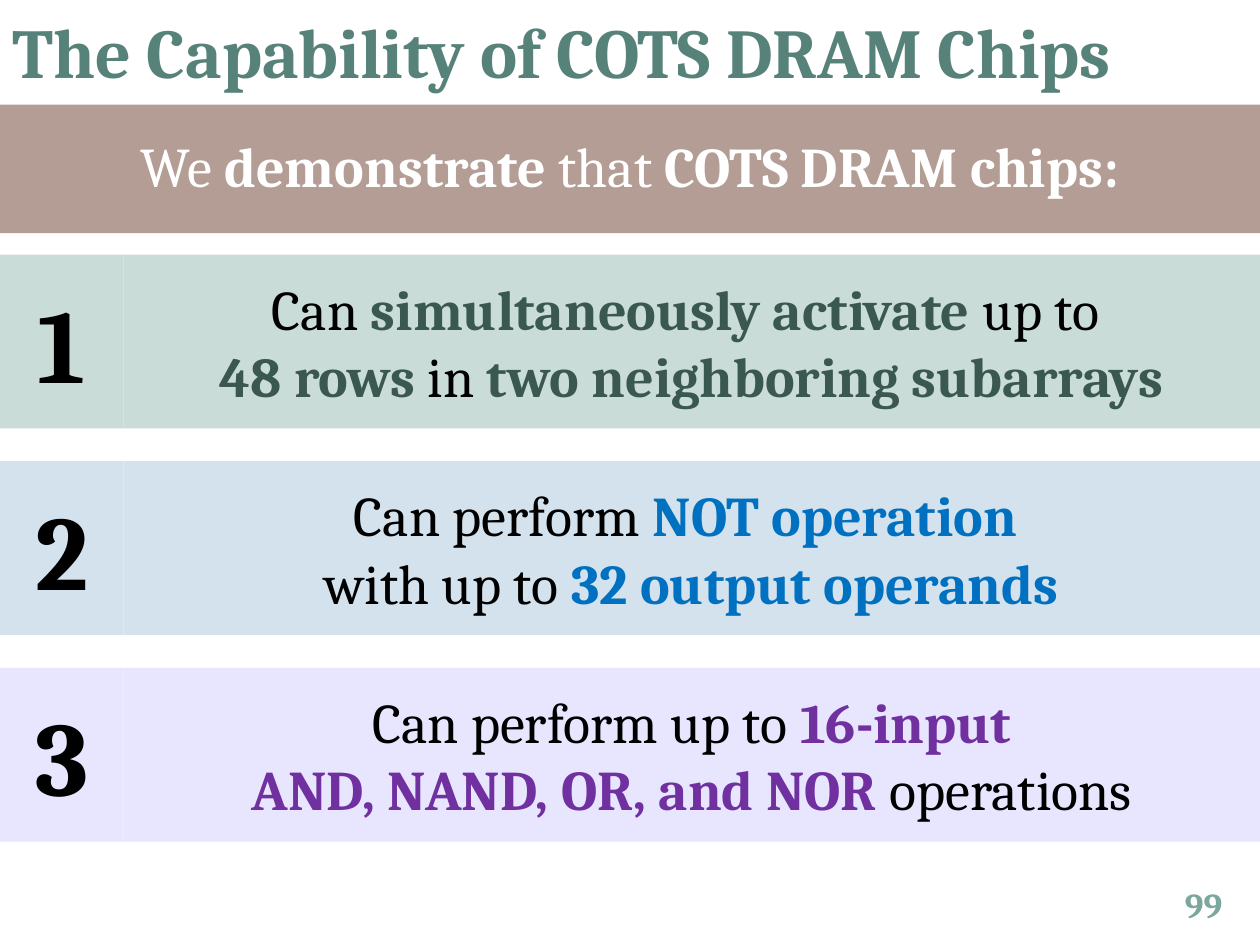
from dataclasses import dataclass

from pptx import Presentation
from pptx.dml.color import RGBColor
from pptx.enum.text import MSO_ANCHOR, MSO_AUTO_SIZE, PP_ALIGN
from pptx.util import Inches, Pt


@dataclass(frozen=True)
class Theme:
    """Fonts, type sizes and colours of the slide."""
    font: str = "Cambria"
    title_size: int = 40
    body_size: int = 32
    number_size: int = 60
    page_size: int = 20
    title: str = "578279"
    page: str = "7BA79D"
    white: str = "FFFFFF"
    black: str = "000000"
    banner: str = "B39D94"
    green_fill: str = "CADCD8"
    green: str = "3A5750"
    blue_fill: str = "D4E2ED"
    blue: str = "0070C0"
    purple_fill: str = "E8E6FE"
    purple: str = "7030A0"


class CapabilitySlide:
    """Draws the slide's elements in one theme."""

    def __init__(self, slide, theme):
        self.slide = slide
        self.theme = theme

    def style(self, paragraph, size, color, bold=None):
        """Set the font shared by all runs of a paragraph."""
        font = paragraph.font
        font.name, font.size, font.bold = self.theme.font, Pt(size), bold
        font.color.rgb = RGBColor.from_string(color)

    def title(self, text, left, top, width, height):
        """Place and format the title placeholder."""
        title = self.slide.shapes.title
        title.left, title.top = Inches(left), Inches(top)
        title.width, title.height = Inches(width), Inches(height)
        frame = title.text_frame
        frame.text = text
        frame.auto_size = MSO_AUTO_SIZE.NONE
        frame.vertical_anchor = MSO_ANCHOR.TOP
        heading = frame.paragraphs[0]
        heading.alignment = PP_ALIGN.LEFT
        heading.line_spacing = 0.9
        self.style(heading, self.theme.title_size, self.theme.title, True)

    def panel(self, shapes, box, fill, lines, size, color, accent=None,
              align=PP_ALIGN.CENTER, spacing=None):
        """Draw a filled panel whose lines are lists of (text, bold) pairs."""
        panel = shapes.add_shape(1, *map(Inches, box))
        panel.shadow.inherit = False
        panel.fill.solid()
        panel.fill.fore_color.rgb = RGBColor.from_string(fill)
        panel.line.fill.background()
        frame = panel.text_frame
        frame.word_wrap = True
        frame.vertical_anchor = MSO_ANCHOR.MIDDLE
        for index, pieces in enumerate(lines):
            line = frame.add_paragraph() if index else frame.paragraphs[0]
            line.alignment = align
            line.line_spacing = spacing
            uniform = len(pieces) == 1
            self.style(line, size, color, pieces[0][1] if uniform else None)
            for text, bold in pieces:
                run = line.add_run()
                run.text = text
                if not uniform:
                    run.font.bold = bold
                if bold and accent:
                    run.font.color.rgb = RGBColor.from_string(accent)

    def capability(self, number, top, height, number_width, fill, accent, lines):
        """Draw a grouped number and statement across the slide."""
        shapes = self.slide.shapes.add_group_shape().shapes
        theme = self.theme
        self.panel(shapes, (number_width, top, 10 - number_width, height), fill,
                   lines, theme.body_size, theme.black, accent)
        self.panel(shapes, (0, top, number_width, height), fill,
                   [[(str(number), True)]], theme.number_size, theme.black)


def main():
    """Build and save the slide."""
    theme = Theme()
    deck = Presentation()
    deck.slide_width, deck.slide_height = Inches(10), Inches(7.5)
    page = CapabilitySlide(deck.slides.add_slide(deck.slide_layouts[5]), theme)
    shapes = page.slide.shapes

    page.title("The Capability of COTS DRAM Chips", 0, 0.09, 10, 0.81)
    page.panel(shapes, (7.8, 6.98, 2, 0.4), theme.white, [[("99", True)]],
               theme.page_size, theme.page, align=PP_ALIGN.RIGHT)
    page.panel(shapes, (0, 0.83, 10, 1.02), theme.banner,
               [[("We ", False), ("demonstrate ", True), ("that", False),
                 (" COTS DRAM chips:", True)]],
               theme.body_size, theme.white, spacing=0.9)

    capabilities = [
        (theme.green_fill, theme.green,
         [[("Can", False), (" simultaneously activate ", True), ("up to ", False)],
          [("48 rows ", True), ("in ", False),
           ("two neighboring subarrays", True)]]),
        (theme.blue_fill, theme.blue,
         [[("Can perform ", False), ("NOT operation ", True)],
          [("with up to ", False), ("32 output operands", True)]]),
        (theme.purple_fill, theme.purple,
         [[("Can perform up to ", False), ("16-input", True)],
          [("AND, NAND, OR, and NOR ", True), ("operations", False)]]),
    ]
    first_top, pitch = 2.02, 1.64
    for index, (fill, accent, lines) in enumerate(capabilities):
        page.capability(index + 1, first_top + index * pitch, 1.38, 0.98,
                        fill, accent, lines)

    deck.save("out.pptx")


if __name__ == "__main__":
    main()
